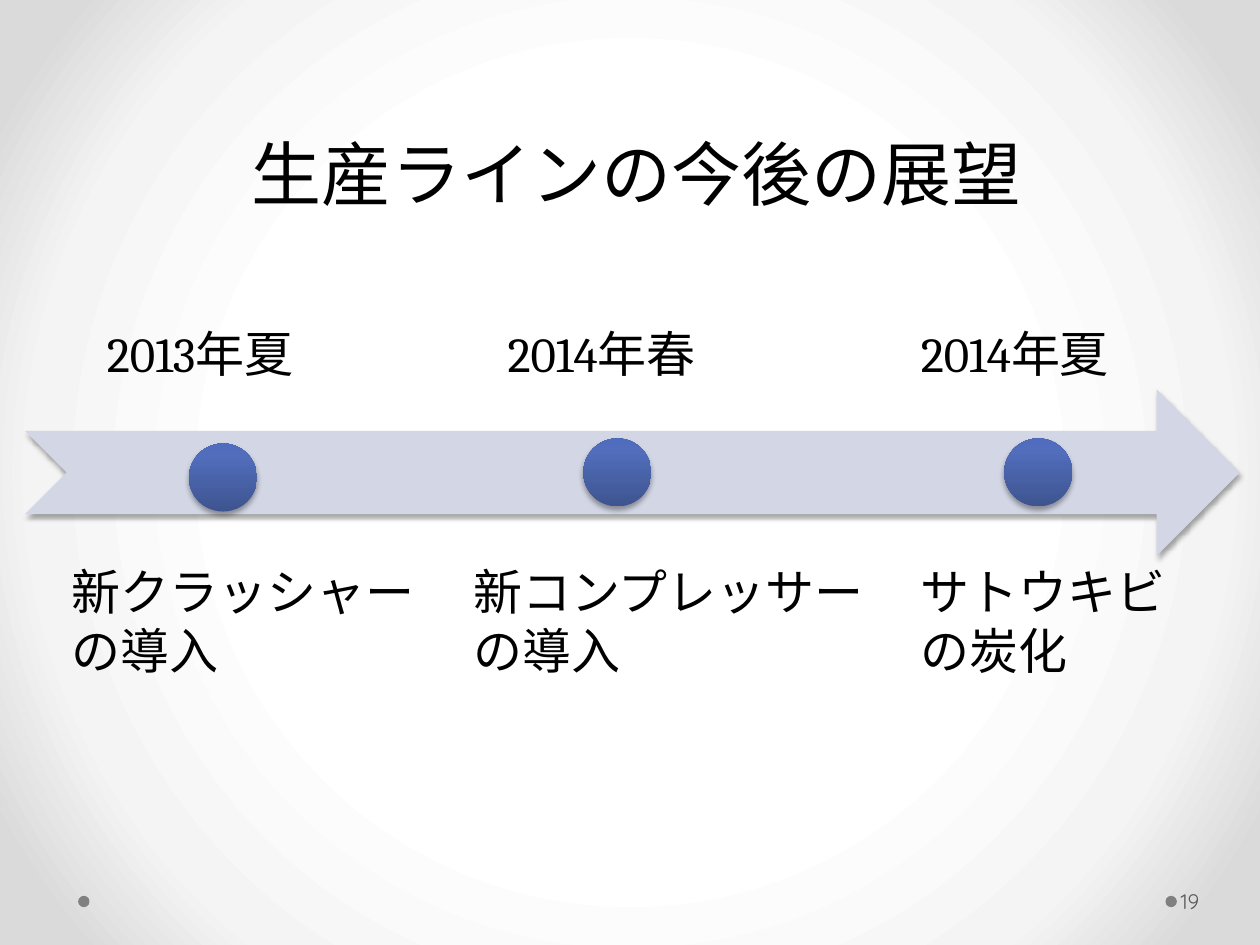
from dataclasses import dataclass

from lxml import etree
from pptx import Presentation
from pptx.dml.color import RGBColor
from pptx.enum.shapes import MSO_SHAPE
from pptx.enum.text import MSO_ANCHOR
from pptx.oxml import parse_xml
from pptx.util import Inches, Pt

OVAL = MSO_SHAPE.OVAL
ARROW = MSO_SHAPE.NOTCHED_RIGHT_ARROW
MIDDLE = MSO_ANCHOR.MIDDLE
DRAWING = "http://schemas.openxmlformats.org/drawingml/2006/main"


@dataclass(frozen=True)
class Theme:
    text: str = "000000"
    number: str = "595959"
    dot: str = "808080"
    arrow: str = "D2D6E5"
    marker: tuple = ((0, "3E5490"), (80, "516DBB"), (100, "4F6CBE"))
    backdrop: tuple = ((50, "FFFFFF"), (76, "F4F4F4"), (92, "DADADA"))
    font: str = "Cambria"
    number_font: str = "Quicksand"
    title_size: int = 40
    body_size: int = 28
    number_size: int = 12


theme = Theme()


def set_gradient(element, stops, direction):
    """Swap the first solid fill inside the element for a gradient."""
    stop_xml = "".join(
        f'<a:gs pos="{position * 1000}"><a:srgbClr val="{color}"/></a:gs>'
        for position, color in stops
    )
    gradient = parse_xml(
        f'<a:gradFill xmlns:a="{DRAWING}" rotWithShape="1">'
        f"<a:gsLst>{stop_xml}</a:gsLst>{direction}</a:gradFill>"
    )
    solid = element.find(f".//{{{DRAWING}}}solidFill")
    solid.getparent().replace(solid, gradient)


def add_text(left, top, width, height, lines, size, font=theme.font, color=theme.text):
    box = slide.shapes.add_textbox(
        Inches(left), Inches(top), Inches(width), Inches(height)
    )
    frame = box.text_frame
    frame.word_wrap = True
    frame.text = lines
    for paragraph in frame.paragraphs:
        paragraph.font.size = Pt(size)
        paragraph.font.name = font
        paragraph.font.color.rgb = RGBColor.from_string(color)
    return frame


presentation = Presentation()
presentation.slide_width = Inches(10)
presentation.slide_height = Inches(7.5)
slide = presentation.slides.add_slide(presentation.slide_layouts[6])

# Background
slide.background.fill.solid()
slide.background.fill.fore_color.rgb = RGBColor.from_string("FFFFFF")
set_gradient(
    slide.element,
    theme.backdrop,
    '<a:path path="circle"><a:fillToRect l="50000" t="50000" r="50000" b="50000"/></a:path>',
)

# Footer dots, timeline arrow and markers: kind, left, top, width, height, fill
DOT, MARKER = 0.09, 0.54
shapes = [(OVAL, left, 7.11, DOT, DOT, theme.dot) for left in (9.25, 0.62)]
shapes.append((ARROW, 0.2, 3.09, 9.64, 1.32, theme.arrow))
shapes += [
    (OVAL, left, top, MARKER, MARKER, theme.marker)
    for left, top in ((4.63, 3.48), (7.97, 3.48), (1.5, 3.52))
]
for kind, left, top, width, height, fill in shapes:
    shape = slide.shapes.add_shape(
        kind, Inches(left), Inches(top), Inches(width), Inches(height)
    )
    shape.line.fill.background()
    shape.shadow.inherit = False
    shape.fill.solid()
    if fill == theme.marker:
        set_gradient(shape.element, fill, '<a:lin ang="16200000" scaled="0"/>')
    else:
        shape.fill.fore_color.rgb = RGBColor.from_string(fill)
    if fill != theme.dot:
        effects = shape.element.spPr.find(f"{{{DRAWING}}}effectLst")
        shadow = etree.SubElement(
            effects, f"{{{DRAWING}}}outerShdw",
            blurRad=str(Pt(3.1)), dist=str(Pt(1.8)), dir="5400000", rotWithShape="0",
        )
        black = etree.SubElement(shadow, f"{{{DRAWING}}}srgbClr", val="000000")
        etree.SubElement(black, f"{{{DRAWING}}}alpha", val="35000")

# Slide number
number = add_text(
    9.34, 6.95, 0.61, 0.4, "19", theme.number_size, theme.number_font, theme.number
)
number.vertical_anchor = MIDDLE
number.margin_left = Inches(0.03)
number.margin_right = Inches(0.05)

# Title
add_text(1.9, 0.99, 6.68, 0.77, "生産ラインの今後の展望", theme.title_size)

# Milestones: date left, date, step left, step width, step
milestones = [
    (0.75, "2013年夏", 0.47, 3.46, "新クラッシャー\nの導入"),
    (3.93, "2014年春", 3.66, 3.62, "新コンプレッサーの導入"),
    (7.21, "2014年夏", 7.21, 2.2, "サトウキビの炭化"),
]
for date_left, date, step_left, step_width, step in milestones:
    add_text(date_left, 2.52, 2.05, 0.57, date, theme.body_size)
    add_text(step_left, 4.41, step_width, 1.04, step, theme.body_size)

presentation.save("out.pptx")
